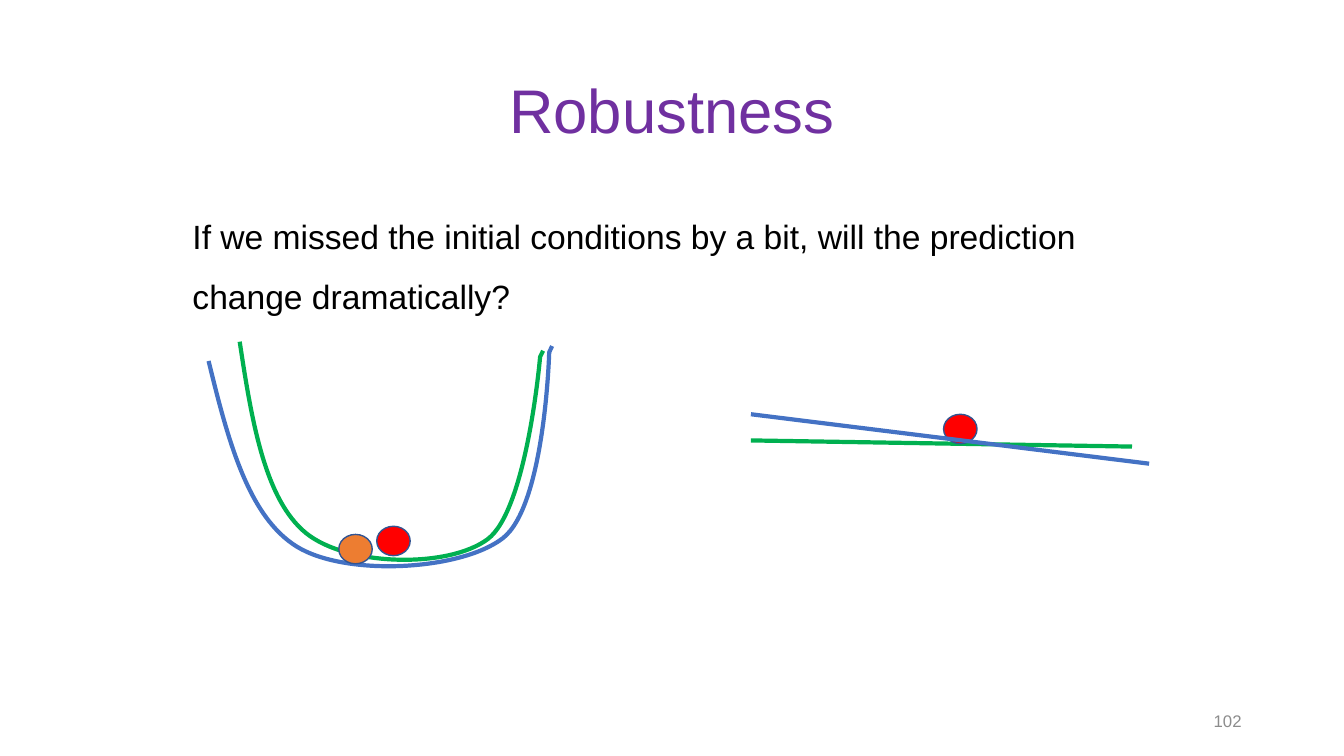
import pptx
import pptx.dml.color
import pptx.enum.shapes
import pptx.enum.text
import pptx.oxml
import pptx.oxml.ns
import pptx.util

Pt = pptx.util.Pt
RGBColor = pptx.dml.color.RGBColor
Align = pptx.enum.text.PP_ALIGN
Anchor = pptx.enum.text.MSO_ANCHOR
qn = pptx.oxml.ns.qn

PURPLE = RGBColor(0x70, 0x30, 0xA0)
BLACK = RGBColor(0x00, 0x00, 0x00)
GRAY = RGBColor(0x8C, 0x8C, 0x8C)
GREEN = RGBColor(0x00, 0xB0, 0x50)
BLUE = RGBColor(0x44, 0x72, 0xC4)
RED = RGBColor(0xFF, 0x00, 0x00)
ORANGE = RGBColor(0xED, 0x7D, 0x31)
OUTLINE = RGBColor(0x32, 0x54, 0x91)

VALLEY_HEIGHT = 155.5
VALLEY_CURVES = [(8.6, 56.9), (18, 113), (47.5, 136.8),
                 (77, 160.6), (149, 162), (177.1, 141.1),
                 (205.2, 120.2), (214.6, 10.8), (214.6, 10.8)]
VALLEY_TIP = [(214.6, 10.8), (216.7, 6.5)]


class SlidePainter:
    font = "Arial"
    curve_width = 3
    ball_size = (23.9, 21)

    def __init__(self, slide):
        self.slide = slide

    def text(self, words, left, top, width, height, size, color,
             align=Align.LEFT, anchor=Anchor.MIDDLE, spacing=1.0):
        box = self.slide.shapes.add_textbox(Pt(left), Pt(top), Pt(width), Pt(height))
        frame = box.text_frame
        frame.text = words
        frame.word_wrap = True
        frame.vertical_anchor = anchor
        paragraph = frame.paragraphs[0]
        paragraph.alignment = align
        paragraph.line_spacing = spacing
        font = paragraph.runs[0].font
        font.name = self.font
        font.size = Pt(size)
        font.color.rgb = color

    def ball(self, left, top, color):
        width, height = self.ball_size
        ball = self.slide.shapes.add_shape(
            pptx.enum.shapes.MSO_SHAPE.OVAL, Pt(left), Pt(top), Pt(width), Pt(height))
        ball.shadow.inherit = False
        ball.fill.solid()
        ball.fill.fore_color.rgb = color
        ball.line.color.rgb = OUTLINE
        ball.line.width = Pt(1)

    def valley(self, left, top, width, color, rotation=0):
        stretch = width / VALLEY_TIP[-1][0]
        builder = self.slide.shapes.build_freeform(Pt(left), Pt(top))
        builder.add_line_segments(
            [(Pt(left + x * stretch), Pt(top + y)) for x, y in VALLEY_CURVES + VALLEY_TIP],
            close=False)
        valley = builder.convert_to_shape()
        outline = valley._element.spPr.find(".//" + qn("a:path"))
        segments = outline.findall(qn("a:lnTo"))[:len(VALLEY_CURVES)]
        for first in range(0, len(segments), 3):
            curve = outline.makeelement(qn("a:cubicBezTo"), {})
            segments[first].addprevious(curve)
            for segment in segments[first:first + 3]:
                curve.append(segment[0])
                outline.remove(segment)
        valley.height = Pt(VALLEY_HEIGHT)
        outline.set("h", str(int(valley.height)))
        valley.rotation = rotation
        valley.shadow.inherit = False
        valley.fill.background()
        valley.line.color.rgb = color
        valley.line.width = Pt(self.curve_width)

    def slope(self, x1, y1, x2, y2, color):
        slope = self.slide.shapes.add_connector(
            pptx.enum.shapes.MSO_CONNECTOR.STRAIGHT, Pt(x1), Pt(y1), Pt(x2), Pt(y2))
        slope.line.color.rgb = color
        slope.line.width = Pt(self.curve_width)
        properties = slope._element.spPr
        properties.append(properties.makeelement(qn("a:effectLst"), {}))


def main():
    deck = pptx.Presentation()
    deck.slide_width, deck.slide_height = Pt(960), Pt(540)
    painter = SlidePainter(deck.slides.add_slide(deck.slide_layouts[6]))

    painter.text("Robustness", 66, 28.8, 828, 104.4, 44, PURPLE,
                 align=Align.CENTER, spacing=0.9)
    painter.text("102", 678, 500.5, 216, 28.8, 12, GRAY, align=Align.RIGHT)
    painter.text("If we missed the initial conditions by a bit, "
                 "will the prediction change dramatically?",
                 130.4, 136.1, 678.2, 89.3, 24, BLACK,
                 anchor=Anchor.TOP, spacing=1.5)

    painter.valley(171.2, 244.1, 216.7, GREEN)
    painter.ball(269.1, 375.9, RED)
    painter.slope(536.4, 314.6, 808.6, 319, GREEN)
    painter.ball(674, 295.9, RED)
    painter.valley(154.1, 249.1, 245.5, BLUE, rotation=356)
    painter.ball(242, 381.7, ORANGE)
    painter.slope(536.4, 295.9, 820.8, 331.2, BLUE)

    deck.save("out.pptx")


if __name__ == "__main__":
    main()
